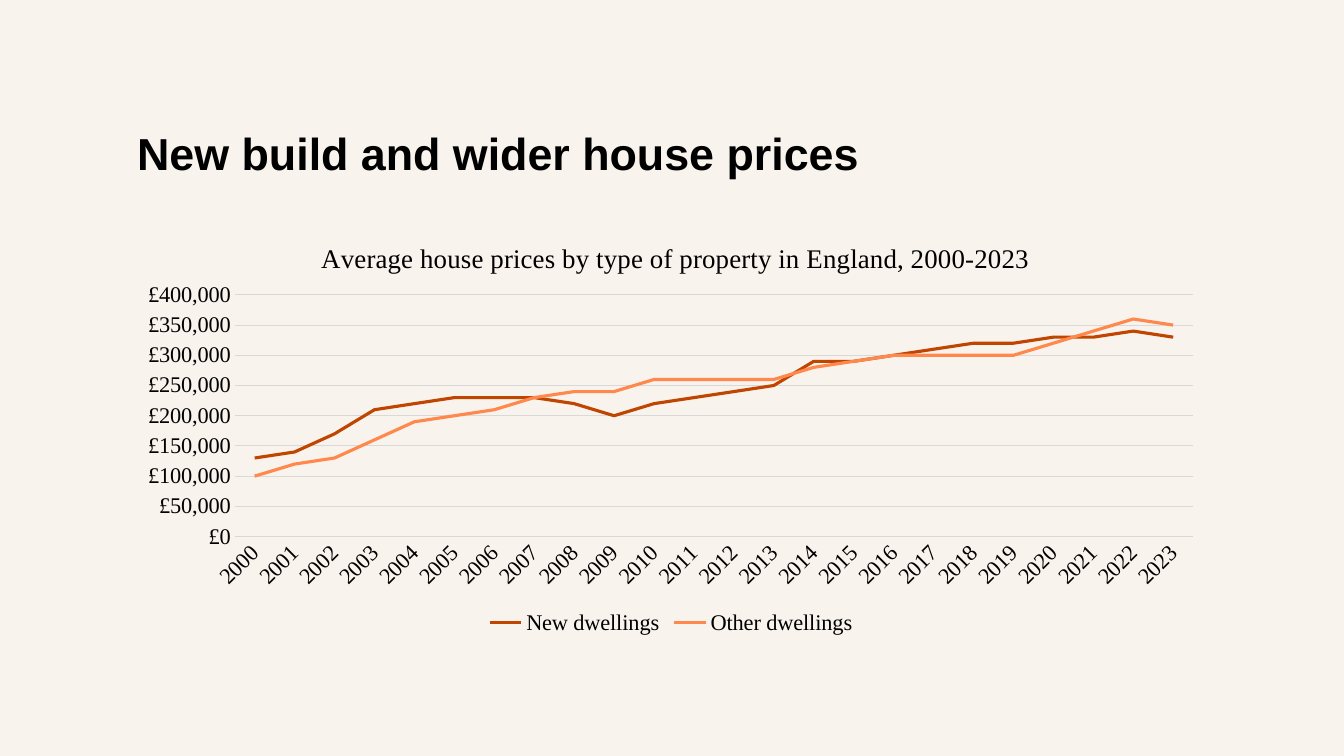
"""Build a slide that compares new build and wider house prices."""
from lxml.etree import SubElement
from pptx import Presentation
from pptx.chart.data import CategoryChartData
from pptx.dml.color import RGBColor
from pptx.enum.chart import XL_CHART_TYPE, XL_LEGEND_POSITION, XL_TICK_MARK
from pptx.enum.text import MSO_ANCHOR, MSO_AUTO_SIZE, PP_ALIGN
from pptx.oxml.ns import qn
from pptx.util import Pt

EMU_PER_PX = 914400 / 100.8
SLIDE_SIZE = (1344, 756)
TITLE_BOX = (127, 116, 1088, 59)
CHART_BOX = (127, 215, 1088, 425)
PLOT_BOX = (235, 295, 958, 242)
CHART_TITLE_CORNER = (316, 236)
BACKGROUND, BLACK, GRID = "F9F3ED", "000000", "D9D9D9"
YEARS = [str(year) for year in range(2000, 2024)]
PRICES_IN_THOUSANDS = {
    "New dwellings": ("C04500", [
        130, 140, 170, 210, 220, 230, 230, 230, 220, 200, 220, 230,
        240, 250, 290, 290, 300, 310, 320, 320, 330, 330, 340, 330]),
    "Other dwellings": ("FF884D", [
        100, 120, 130, 160, 190, 200, 210, 230, 240, 240, 260, 260,
        260, 260, 280, 290, 300, 300, 300, 300, 320, 340, 360, 350]),
}


def px(length):
    """Turn a length in px into EMU."""
    return round(length * EMU_PER_PX)


def color(code):
    """Turn a hex string into a colour."""
    return RGBColor.from_string(code)


def style_font(font, size, name, bold=False):
    """Give a font its size, face, weight and black colour."""
    font.size, font.name, font.bold = Pt(size), name, bold
    font.color.rgb = color(BLACK)


def style_line(line, code, width):
    """Give a line its colour and width."""
    line.color.rgb = color(code)
    line.width = Pt(width)


def add_title(page, text):
    """Place and format the slide title."""
    title = page.shapes.title
    title.left, title.top, title.width, title.height = map(px, TITLE_BOX)
    frame = title.text_frame
    frame.auto_size = MSO_AUTO_SIZE.NONE
    frame.vertical_anchor = MSO_ANCHOR.TOP
    frame.margin_top, frame.margin_bottom = px(10), 0
    para = frame.paragraphs[0]
    para.alignment, para.line_spacing = PP_ALIGN.LEFT, 1.0
    span = para.add_run()
    span.text = text
    style_font(span.font, 32, "Arial", True)


def place_part(part, box, inner=False):
    """Fix a chart part at a px box or corner within the chart."""
    layout = part.get_or_add_layout() if hasattr(part, "get_or_add_layout") else part.find(qn("c:layout"))
    if layout is None:
        layout = part.makeelement(qn("c:layout"), {})
        part.insert(0, layout)
    for child in list(layout):
        layout.remove(child)
    manual = SubElement(layout, qn("c:manualLayout"))
    left, top, width, height = CHART_BOX
    shares = [(box[0] - left) / width, (box[1] - top) / height]
    shares += [length / whole for length, whole in zip(box[2:], (width, height))]
    settings = [("layoutTarget", "inner")] if inner else []
    settings += [("xMode", "edge"), ("yMode", "edge")]
    settings += [(key, f"{share:.3f}") for key, share in zip("xywh", shares)]
    for key, value in settings:
        SubElement(manual, qn(f"c:{key}")).set("val", value)


def style_axes(chart):
    """Format the year and price axes."""
    years, prices = chart.category_axis, chart.value_axis
    for axis in (years, prices):
        axis.major_tick_mark = axis.minor_tick_mark = XL_TICK_MARK.NONE
        style_font(axis.tick_labels.font, 16, "Times New Roman")
    style_line(years.format.line, GRID, 0.75)
    years.tick_labels.font
    label_body = next(years._element.iter(qn("a:bodyPr")))
    label_body.set("rot", "-2700000")
    prices.minimum_scale, prices.maximum_scale, prices.major_unit = 0, 400000, 50000
    prices.tick_labels.number_format = '"£"#,##0'
    prices.tick_labels.number_format_is_linked = False
    prices.format.line.fill.background()
    style_line(prices.major_gridlines.format.line, GRID, 0.75)


def add_price_chart(page, text):
    """Add the line chart with its title, series and legend."""
    data = CategoryChartData()
    data.categories = YEARS
    for name, (_, thousands) in PRICES_IN_THOUSANDS.items():
        data.add_series(name, [value * 1000 for value in thousands])
    chart = page.shapes.add_chart(XL_CHART_TYPE.LINE, *map(px, CHART_BOX), data).chart
    style_font(chart.font, 16, "Times New Roman")
    span = chart.chart_title.text_frame.paragraphs[0].add_run()
    span.text = text
    style_font(span.font, 19.2, "Times New Roman")
    chart.chart_title.include_in_layout = False
    plot = chart.plots[0]
    plot.vary_by_categories = False
    for series in plot.series:
        series.smooth = False
        style_line(series.format.line, PRICES_IN_THOUSANDS[series.name][0], 2.25)
    style_axes(chart)
    chart.has_legend = True
    chart.legend.position = XL_LEGEND_POSITION.BOTTOM
    chart.legend.include_in_layout = False
    style_font(chart.legend.font, 16, "Times New Roman")
    place_part(chart._chartSpace.chart.plotArea, PLOT_BOX, inner=True)
    place_part(chart.chart_title._element, CHART_TITLE_CORNER)


def main():
    """Build and save the deck."""
    deck = Presentation()
    deck.slide_width, deck.slide_height = map(px, SLIDE_SIZE)
    page = deck.slides.add_slide(deck.slide_layouts[5])
    fill = page.background.fill
    fill.solid()
    fill.fore_color.rgb = color(BACKGROUND)
    add_title(page, "New build and wider house prices")
    add_price_chart(page, "Average house prices by type of property in England, 2000-2023")
    deck.save("out.pptx")


if __name__ == "__main__":
    main()
